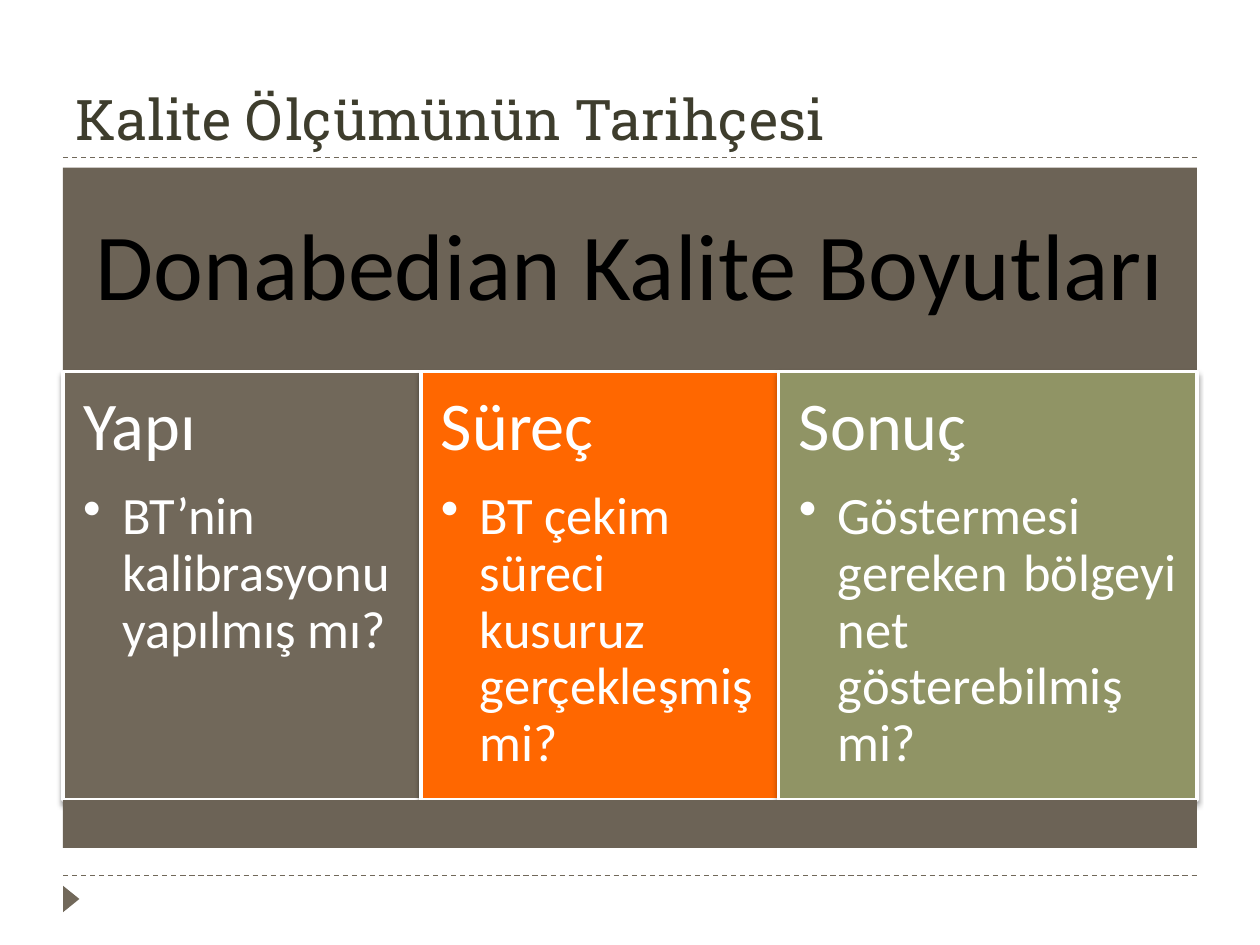
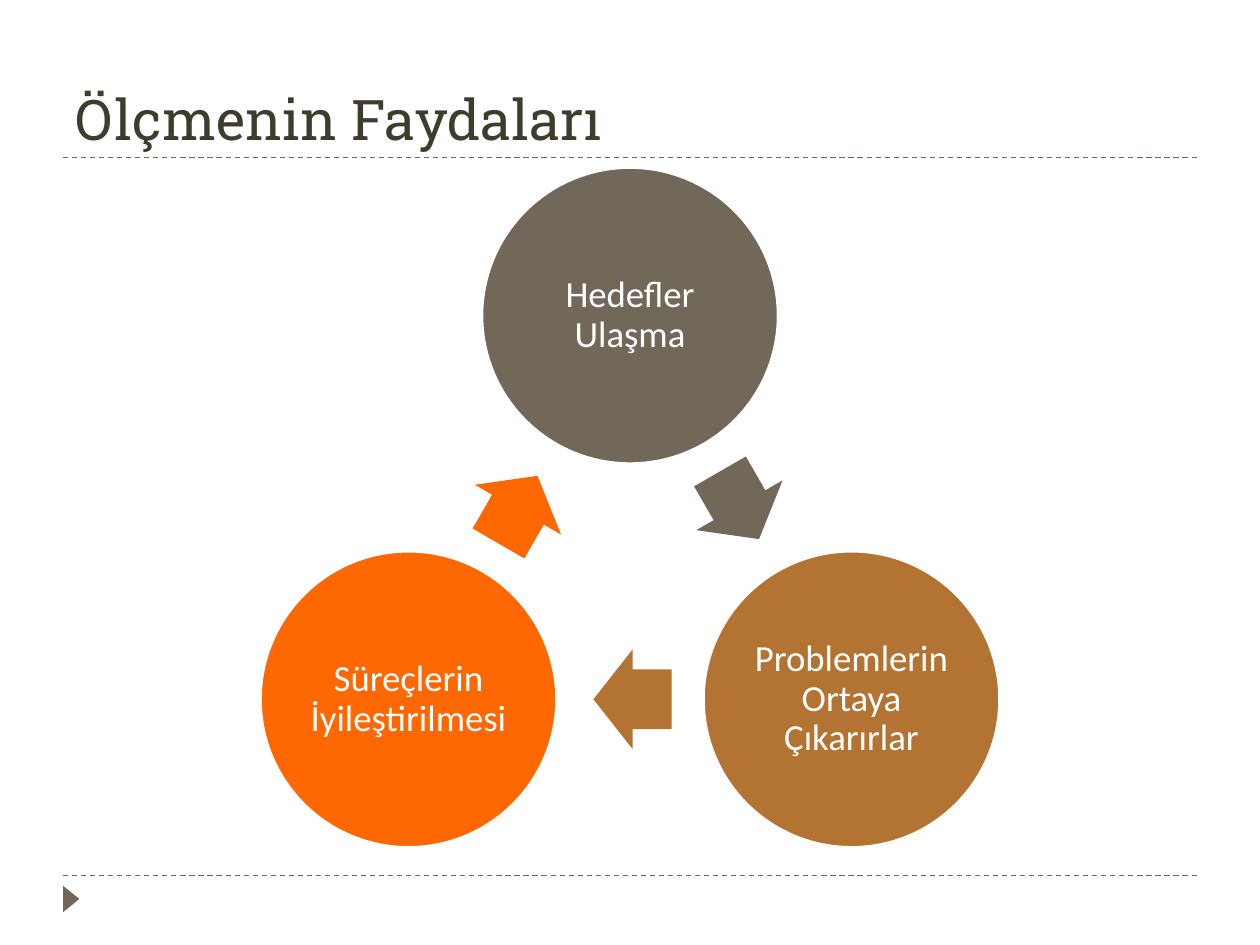
from math import cos, radians, sin
from typing import NamedTuple, Optional

from lxml import etree
from pptx import Presentation
from pptx.dml.color import RGBColor
from pptx.enum.dml import MSO_LINE
from pptx.enum.shapes import MSO_CONNECTOR, MSO_SHAPE
from pptx.enum.text import MSO_ANCHOR, PP_ALIGN
from pptx.oxml.ns import qn
from pptx.util import Inches, Pt

RECTANGLE, OVAL = MSO_SHAPE.RECTANGLE, MSO_SHAPE.OVAL
TRIANGLE, RIGHT_ARROW = MSO_SHAPE.ISOSCELES_TRIANGLE, MSO_SHAPE.RIGHT_ARROW
STRAIGHT, DASH = MSO_CONNECTOR.STRAIGHT, MSO_LINE.DASH
LEFT, CENTER, JUSTIFY = PP_ALIGN.LEFT, PP_ALIGN.CENTER, PP_ALIGN.JUSTIFY
TOP, MIDDLE, BOTTOM = MSO_ANCHOR.TOP, MSO_ANCHOR.MIDDLE, MSO_ANCHOR.BOTTOM

# Shared look
TITLE_FONT, BODY_FONT = "Roboto Slab", "Calibri"
TITLE_COLOR, BLACK, WHITE = "3E3D2D", "000000", "FFFFFF"
TAUPE, DARK_TAUPE, ORANGE = "71685A", "6C6356", "FF6700"
OLIVE, BROWN = "909465", "B27333"
MARGIN, CONTENT_WIDTH, CONTENT_TOP = 0.5, 9, 1.33


class Box(NamedTuple):
    left: float
    top: float
    width: float
    height: float


class Column(NamedTuple):
    heading: str
    question: str
    width: float
    color: str
    align: PP_ALIGN = LEFT


class Stage(NamedTuple):
    label: str
    color: str


COLUMNS = [
    Column("Yapı", "BT’nin kalibrasyonu yapılmış mı?", 2.84, TAUPE),
    Column("Süreç", "BT çekim süreci kusuruz gerçekleşmiş mi?", 2.84, ORANGE),
    Column("Sonuç", "Göstermesi gereken bölgeyi net gösterebilmiş mi?",
           3.32, OLIVE, JUSTIFY),
]
STAGES = [
    Stage("Hedefler Ulaşma", TAUPE),
    Stage("Problemlerin Ortaya Çıkarırlar", BROWN),
    Stage("Süreçlerin İyileştirilmesi", ORANGE),
]


def rgb(color: str) -> RGBColor:
    return RGBColor.from_string(color)


def centered_box(x: float, y: float, width: float, height: float) -> Box:
    return Box(x - width / 2, y - height / 2, width, height)


def add_block(slide, kind: MSO_SHAPE, box: Box, fill: str,
              line_width: Optional[float] = None, rotation: float = 0):
    """Add a filled shape, with a white outline if a line width is given."""
    shape = slide.shapes.add_shape(kind, *map(Inches, box))
    shape.shadow.inherit = False
    shape.rotation = rotation
    shape.fill.solid()
    shape.fill.fore_color.rgb = rgb(fill)
    if line_width is None:
        shape.line.fill.background()
    else:
        shape.line.color.rgb = rgb(WHITE)
        shape.line.width = Pt(line_width)
    return shape


def add_soft_shadow(shape) -> None:
    effects = shape._element.spPr.find(qn("a:effectLst"))
    shadow = etree.SubElement(
        effects, qn("a:outerShdw"), blurRad=str(Pt(3)), dist=str(Pt(2)),
        dir="5400000", algn="ctr", rotWithShape="0")
    color = etree.SubElement(shadow, qn("a:srgbClr"), val=BLACK)
    etree.SubElement(color, qn("a:alpha"), val="40000")


def prepare_frame(shape, anchor: MSO_ANCHOR, inset: float):
    frame = shape.text_frame
    frame.word_wrap = True
    frame.vertical_anchor = anchor
    frame.margin_left = frame.margin_right = Inches(inset)
    frame.margin_top = frame.margin_bottom = Inches(inset)
    return frame


def write(paragraph, text: str, size: float, color: str = WHITE,
          align: PP_ALIGN = LEFT, font: str = BODY_FONT,
          line_spacing: float = 0.9, after: float = 0.35,
          bullet: bool = False) -> None:
    """Fill a paragraph; the space after it is a share of the text size."""
    paragraph.text = text
    paragraph.alignment = align
    paragraph.line_spacing = line_spacing
    paragraph.space_after = Pt(size * after)
    if bullet:
        paragraph.level = 1
        properties = paragraph._p.get_or_add_pPr()
        properties.set("marL", str(Inches(0.31)))
        properties.set("indent", str(Inches(-0.31)))
        etree.SubElement(properties, qn("a:buChar"), char="•")
    paragraph.font.name = font
    paragraph.font.size = Pt(size)
    paragraph.font.color.rgb = rgb(color)


def add_rule(slide, y: float) -> None:
    rule = slide.shapes.add_connector(
        STRAIGHT, Inches(MARGIN), Inches(y),
        Inches(MARGIN + CONTENT_WIDTH), Inches(y))
    rule.line.color.rgb = rgb(TAUPE)
    rule.line.width = Pt(0.75)
    rule.line.dash_style = DASH
    etree.SubElement(rule._element.spPr, qn("a:effectLst"))


def add_titled_slide(presentation, title: str):
    """Add a slide with the dashed rules, corner marker and title."""
    slide = presentation.slides.add_slide(presentation.slide_layouts[6])
    for y in (6.95, 1.25):
        add_rule(slide, y)
    add_block(slide, TRIANGLE, Box(0.46, 7.07, 0.21, 0.13), TAUPE, rotation=90)
    title_box = slide.shapes.add_textbox(
        *map(Inches, Box(MARGIN, 0.17, CONTENT_WIDTH, 1.08)))
    frame = prepare_frame(title_box, BOTTOM, 0.1)
    frame.margin_top = frame.margin_bottom = Inches(0.05)
    write(frame.paragraphs[0], title, 32, TITLE_COLOR, font=TITLE_FONT,
          line_spacing=1.0, after=0)
    return slide


def build_dimensions_slide(presentation) -> None:
    slide = add_titled_slide(presentation, "Kalite Ölçümünün Tarihçesi")
    band_height, column_height, base_height = 1.62, 3.4, 0.38
    columns_top = CONTENT_TOP + band_height

    # Heading band
    band = add_block(slide, RECTANGLE,
                     Box(MARGIN, CONTENT_TOP, CONTENT_WIDTH, band_height),
                     DARK_TAUPE)
    frame = prepare_frame(band, MIDDLE, 0.23)
    write(frame.paragraphs[0], "Donabedian Kalite Boyutları", 54, BLACK, CENTER)

    # Three columns side by side
    left = MARGIN
    for column in COLUMNS:
        panel = add_block(slide, RECTANGLE,
                          Box(left, columns_top, column.width, column_height),
                          column.color, line_width=2)
        add_soft_shadow(panel)
        frame = prepare_frame(panel, TOP, 0.16)
        write(frame.paragraphs[0], column.heading, 39)
        write(frame.add_paragraph(), column.question, 30, align=column.align,
              after=0.15, bullet=True)
        left += column.width

    # Base band
    add_block(slide, RECTANGLE,
              Box(MARGIN, columns_top + column_height, CONTENT_WIDTH,
                  base_height), DARK_TAUPE)


def build_benefits_slide(presentation) -> None:
    slide = add_titled_slide(presentation, "Ölçmenin Faydaları")
    diameter, ring_radius = 2.35, 2.03
    center_x, center_y = 5, CONTENT_TOP + diameter / 2 + ring_radius
    step = 360 / len(STAGES)
    arrow_distance = ring_radius * cos(radians(step / 2))
    arrow_setback = 0.02

    for index, stage in enumerate(STAGES):
        # Circle on the ring, clockwise from the top
        angle = radians(index * step)
        circle = add_block(
            slide, OVAL,
            centered_box(center_x + ring_radius * sin(angle),
                         center_y - ring_radius * cos(angle),
                         diameter, diameter),
            stage.color, line_width=1.5)
        frame = prepare_frame(circle, MIDDLE, 0.03)
        write(frame.paragraphs[0], stage.label, 21, align=CENTER)

        # Arrow halfway to the next circle, set back a little
        heading = (index + 0.5) * step
        angle = radians(heading)
        arrow = add_block(
            slide, RIGHT_ARROW,
            centered_box(
                center_x + arrow_distance * sin(angle)
                - arrow_setback * cos(angle),
                center_y - arrow_distance * cos(angle)
                - arrow_setback * sin(angle),
                0.62, 0.79),
            stage.color, rotation=heading)
        arrow.adjustments[0] = 0.6
        arrow.adjustments[1] = 0.5


def main() -> None:
    presentation = Presentation()
    presentation.slide_width = Inches(10)
    presentation.slide_height = Inches(7.5)
    build_dimensions_slide(presentation)
    build_benefits_slide(presentation)
    presentation.save("out.pptx")


if __name__ == "__main__":
    main()
